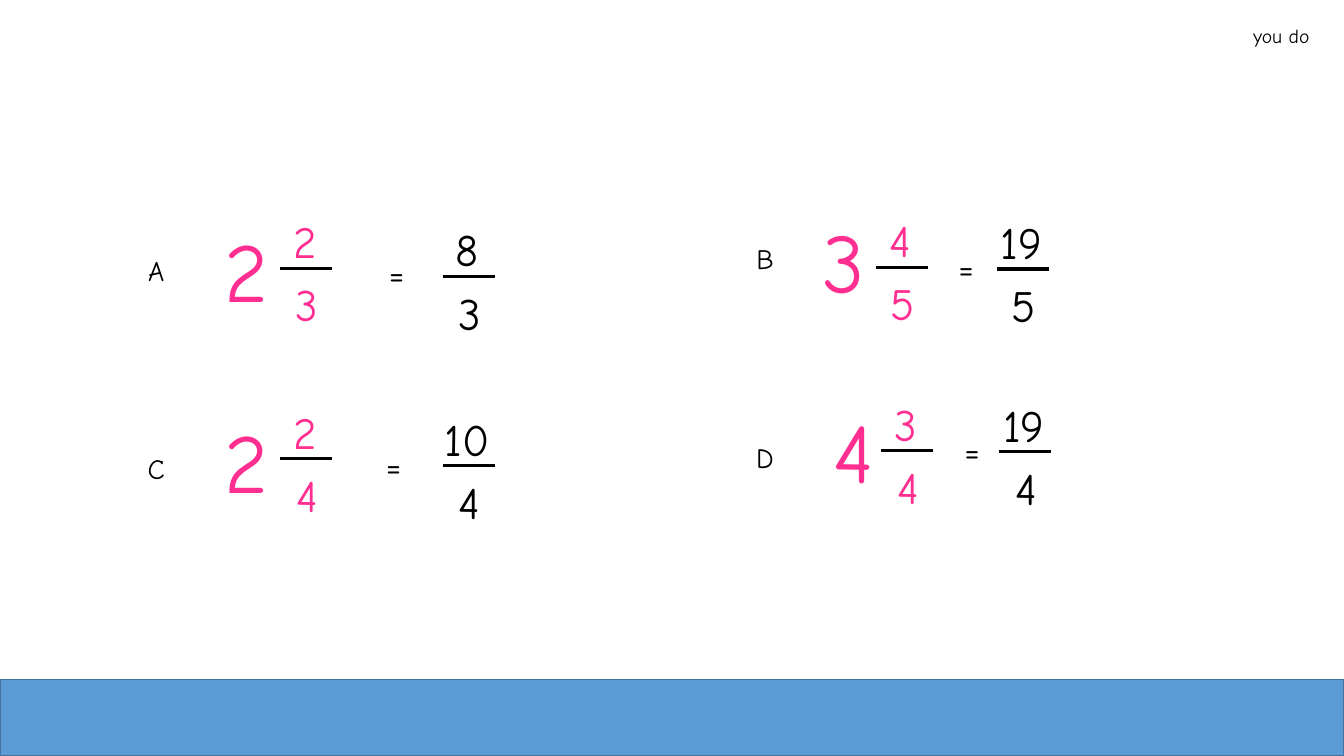
from dataclasses import dataclass
from typing import NamedTuple

from lxml import etree
from pptx import Presentation
from pptx.dml.color import RGBColor
from pptx.enum import shapes, text
from pptx.oxml import ns
from pptx.util import Pt


@dataclass(frozen=True)
class Theme:
    font: str = "Comic Neue"
    ink: str = "000000"
    pink: str = "FF2F92"
    band: str = "5B9BD5"
    edge: str = "43739E"
    note: int = 14
    letter: int = 20
    equals: int = 24
    digit: int = 32
    whole: int = 60
    bar: float = 2.25


class Spot(NamedTuple):
    x: float
    y: float


class Size(NamedTuple):
    w: float
    h: float


class Ratio(NamedTuple):
    top: str
    base: str
    bar: Spot


class Problem(NamedTuple):
    letter: str
    mark: Spot
    whole: str
    big: Spot
    mixed: Ratio
    equals: Spot
    answer: Ratio


THEME = Theme()
NOTE = Size(85, 24.5)
LETTER = Size(96.5, 39.6)
WHOLE = Size(62.6, 25.9)
DIGIT = Size(126, 51.8)
BAR = 37.2

PROBLEMS = [
    Problem("A", Spot(63.4, 177.8), "2", Spot(144.7, 152.6),
            Ratio("2", "3", Spot(200, 191.5)), Spot(220.3, 177.1),
            Ratio("8", "3", Spot(316.1, 197.3))),
    Problem("B", Spot(498.2, 169.2), "3", Spot(571.7, 146.2),
            Ratio("4", "5", Spot(625.4, 190.8)), Spot(627.1, 172.8),
            Ratio("19", "5", Spot(711.9, 192.2))),
    Problem("C", Spot(63.4, 319), "2", Spot(144.7, 288.7),
            Ratio("2", "4", Spot(200, 327.6)), Spot(218.2, 313.9),
            Ratio("10", "4", Spot(316.1, 332.6))),
    Problem("D", Spot(498.2, 311), "4", Spot(578.9, 282.2),
            Ratio("3", "4", Spot(629.3, 321.8)), Spot(631.4, 303.8),
            Ratio("19", "4", Spot(713.5, 322.6))),
]


def label(slide, words: str, spot: Spot, size: Size, points: int,
          color: str = THEME.ink, align=text.PP_ALIGN.CENTER) -> None:
    """Place one line of text with a fifth of a line above it."""
    box = slide.shapes.add_textbox(*map(Pt, spot + size))
    frame = box.text_frame
    frame.word_wrap = True
    para = frame.paragraphs[0]
    para.text = words
    para.alignment = align
    font = para.font
    font.name = THEME.font
    font.size = Pt(points)
    font.color.rgb = RGBColor.from_string(color)
    gap = etree.Element(ns.qn("a:spcBef"))
    etree.SubElement(gap, ns.qn("a:spcPct"), val="20000")
    para._p.get_or_add_pPr().insert(0, gap)


def ratio(slide, item: Ratio, color: str) -> None:
    """Draw a fraction whose digits hang off the left end of its bar."""
    x, y = item.bar
    label(slide, item.top, Spot(x - 45.2, y - 42.3), DIGIT, THEME.digit, color)
    label(slide, item.base, Spot(x - 43.7, y + 2.9), DIGIT, THEME.digit, color)
    line = slide.shapes.add_connector(
        shapes.MSO_CONNECTOR.STRAIGHT, Pt(x), Pt(y), Pt(x + BAR), Pt(y))
    line.line.color.rgb = RGBColor.from_string(THEME.ink)
    line.line.width = Pt(THEME.bar)
    etree.SubElement(line._element.spPr, ns.qn("a:effectLst"))


def problem(slide, item: Problem) -> None:
    label(slide, item.letter, item.mark, LETTER, THEME.letter)
    label(slide, item.whole, item.big, WHOLE, THEME.whole, THEME.pink)
    ratio(slide, item.mixed, THEME.pink)
    label(slide, "=", item.equals, DIGIT, THEME.equals)
    ratio(slide, item.answer, THEME.ink)


def footer(slide) -> None:
    band = slide.shapes.add_shape(
        shapes.MSO_SHAPE.RECTANGLE, Pt(0), Pt(485.5), Pt(960), Pt(54.5))
    band.shadow.inherit = False
    band.fill.solid()
    band.fill.fore_color.rgb = RGBColor.from_string(THEME.band)
    band.line.color.rgb = RGBColor.from_string(THEME.edge)
    band.line.width = Pt(1)


def main() -> None:
    deck = Presentation()
    deck.slide_width, deck.slide_height = Pt(960), Pt(540)
    slide = deck.slides.add_slide(deck.slide_layouts[6])
    label(slide, "you do", Spot(857.5, 13.7), NOTE, THEME.note,
          align=text.PP_ALIGN.RIGHT)
    for item in PROBLEMS:
        problem(slide, item)
    footer(slide)
    deck.save("out.pptx")


if __name__ == "__main__":
    main()
